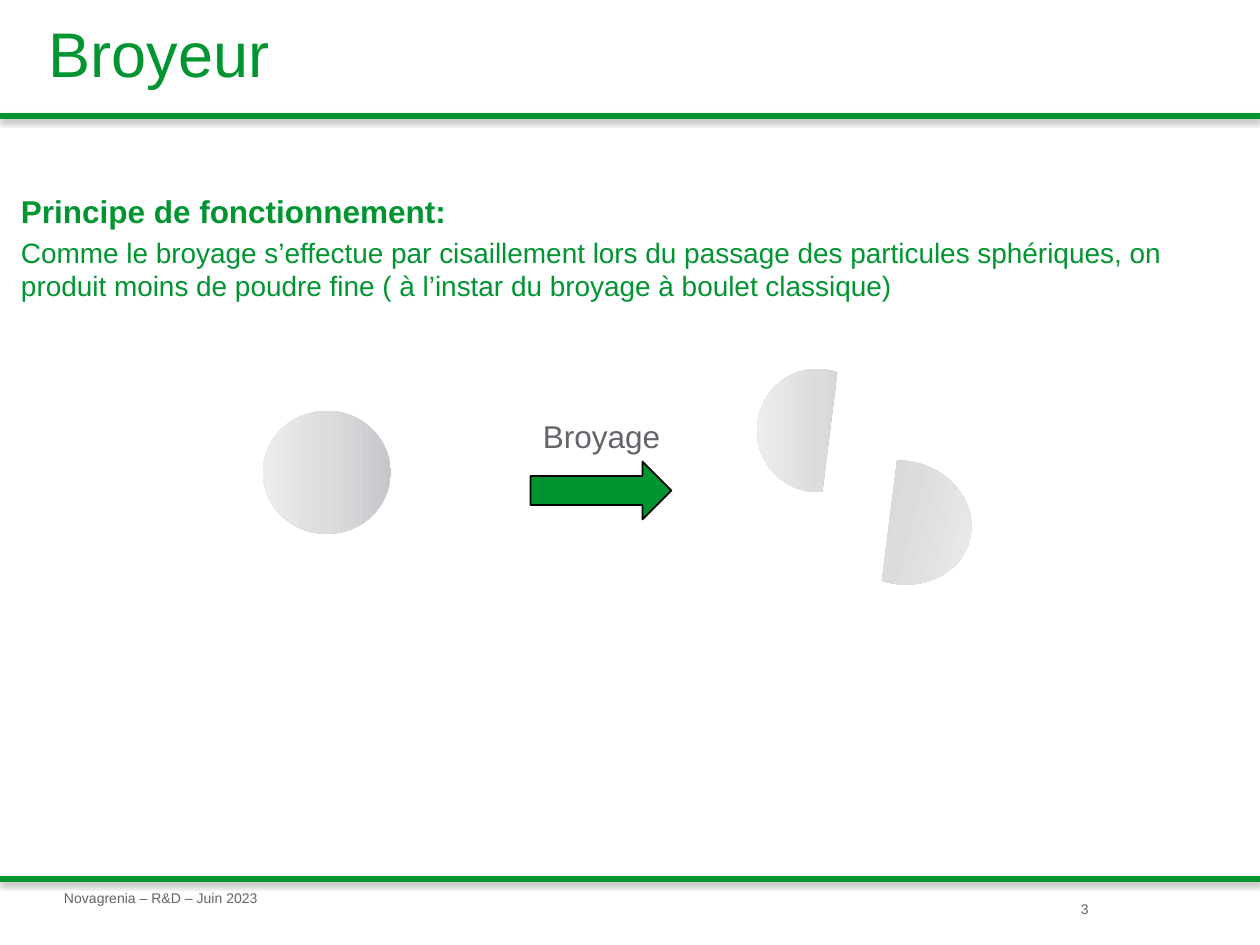
"""Build the slide that explains how the grinder works."""
from copy import deepcopy

from pptx import Presentation
from pptx.dml.color import RGBColor
from pptx.enum.shapes import MSO_CONNECTOR, MSO_SHAPE as Shape
from pptx.enum.text import MSO_ANCHOR as Anchor, MSO_AUTO_SIZE as AutoSize
from pptx.oxml import parse_xml
from pptx.oxml.ns import nsdecls, qn
from pptx.util import Emu, Pt

GREEN = RGBColor(0x00, 0x95, 0x30)
GREY = RGBColor(0x62, 0x64, 0x69)
BLACK = RGBColor(0x00, 0x00, 0x00)
METAL = [
    (0, RGBColor(0xC6, 0xC7, 0xCB)),
    (0.5, RGBColor(0xDB, 0xDC, 0xDE)),
    (1, RGBColor(0xED, 0xED, 0xEE)),
]
SCALE = 914400 / 126
WIDTH, HEIGHT = 1260, 945
RULE_TOPS = [879, 116]
HALF = [51.265, 173.289]

SMALL = {"name": "Arial", "size": Pt(8), "color": GREY}
LABEL = {**SMALL, "size": Pt(18)}
TITLE = {"name": "Arial", "size": Pt(36), "color": GREEN}
HEADING = {**TITLE, "size": Pt(18), "bold": True}
BODY = {**TITLE, "size": Pt(16)}

# Each text: place, insets, frame format, paragraphs of (wording, font, space before)
TEXTS = [
    ((1081, 901, 40, 10), (0, 0, 0, 0), {"word_wrap": True}, [("3", SMALL, 0)]),
    ((64, 890, 205, 16), (0, 0, 0, 0),
     {"word_wrap": False, "auto_size": AutoSize.SHAPE_TO_FIT_TEXT},
     [("Novagrenia – R&D – Juin 2023", SMALL, 0)]),
    ((49, 0, 907, 105), (0, 1, 0, 1),
     {"word_wrap": True, "vertical_anchor": Anchor.MIDDLE}, [("Broyeur", TITLE, 0)]),
    ((21, 186, 1191, 664), (0, 6, 2, 1), {"word_wrap": True}, [
        ("Principe de fonctionnement:", HEADING, 0),
        ("Comme le broyage s’effectue par cisaillement lors du passage des "
         "particules sphériques, on produit moins de poudre fine ( à l’instar "
         "du broyage à boulet classique)", BODY, 3.2),
    ]),
    ((530, 411, 169, 50), (13, 6, 13, 6),
     {"word_wrap": True, "auto_size": AutoSize.SHAPE_TO_FIT_TEXT},
     [("Broyage", LABEL, 0)]),
]
# Each particle: preset, place, adjustments, rotation, mirrored
PARTICLES = [
    (Shape.OVAL, (263, 411, 128, 123), [], 0, False),
    (Shape.CHORD, (757, 369, 121, 123), HALF, 0, False),
    (Shape.CHORD, (832, 461, 140, 123), HALF, 14.4, True),
]
ARROW = (572, 420, 58, 141)


def px(*lengths):
    return [Emu(round(length * SCALE)) for length in lengths]


def add_rule(page, top):
    rule = page.shapes.add_connector(MSO_CONNECTOR.STRAIGHT, *px(0, top, WIDTH, top))
    rule.line.color.rgb = GREEN
    rule.line.width = Pt(3)
    rule._element.spPr.append(parse_xml(
        f'<a:effectLst {nsdecls("a")}><a:outerShdw blurRad="40000" dist="23000" '
        'dir="5400000" rotWithShape="0"><a:srgbClr val="000000">'
        '<a:alpha val="35000"/></a:srgbClr></a:outerShdw></a:effectLst>'))


def add_text(page, place, insets, layout, paragraphs):
    frame = page.shapes.add_textbox(*px(*place)).text_frame
    sides = ("margin_left", "margin_top", "margin_right", "margin_bottom")
    for name, value in {**dict(zip(sides, px(*insets))), **layout}.items():
        setattr(frame, name, value)
    for index, (wording, style, gap) in enumerate(paragraphs):
        para = frame.add_paragraph() if index else frame.paragraphs[0]
        if gap:
            para.space_before = Pt(gap)
        span = para.add_run()
        span.text = wording
        for name, value in style.items():
            if name == "color":
                span.font.color.rgb = value
            else:
                setattr(span.font, name, value)


def add_particle(page, preset, place, adjustments, rotation, mirrored):
    particle = page.shapes.add_shape(preset, *px(*place))
    particle.shadow.inherit = False
    particle.rotation = rotation
    for index, value in enumerate(adjustments):
        particle.adjustments[index] = value
    if mirrored:
        particle._element.spPr.find(qn("a:xfrm")).set("flipH", "1")
    particle.line.fill.background()
    particle.fill.gradient()
    particle.fill.gradient_angle = 180
    stops = particle._element.spPr.find(qn("a:gradFill")).find(qn("a:gsLst"))
    stops.append(deepcopy(stops[0]))
    for stop, (position, color) in zip(particle.fill.gradient_stops, METAL):
        stop.position = position
        stop.color.rgb = color


def add_arrow(page):
    arrow = page.shapes.add_shape(Shape.DOWN_ARROW, *px(*ARROW))
    arrow.shadow.inherit = False
    arrow.rotation = 270
    arrow.fill.solid()
    arrow.fill.fore_color.rgb = GREEN
    arrow.line.color.rgb = BLACK
    arrow.line.width = Pt(1)


def main():
    deck = Presentation()
    deck.slide_width, deck.slide_height = px(WIDTH, HEIGHT)
    page = deck.slides.add_slide(deck.slide_layouts[6])
    for top in RULE_TOPS:
        add_rule(page, top)
    for text in TEXTS[:-1]:
        add_text(page, *text)
    for particle in PARTICLES:
        add_particle(page, *particle)
    add_arrow(page)
    add_text(page, *TEXTS[-1])
    deck.save("out.pptx")


if __name__ == "__main__":
    main()
